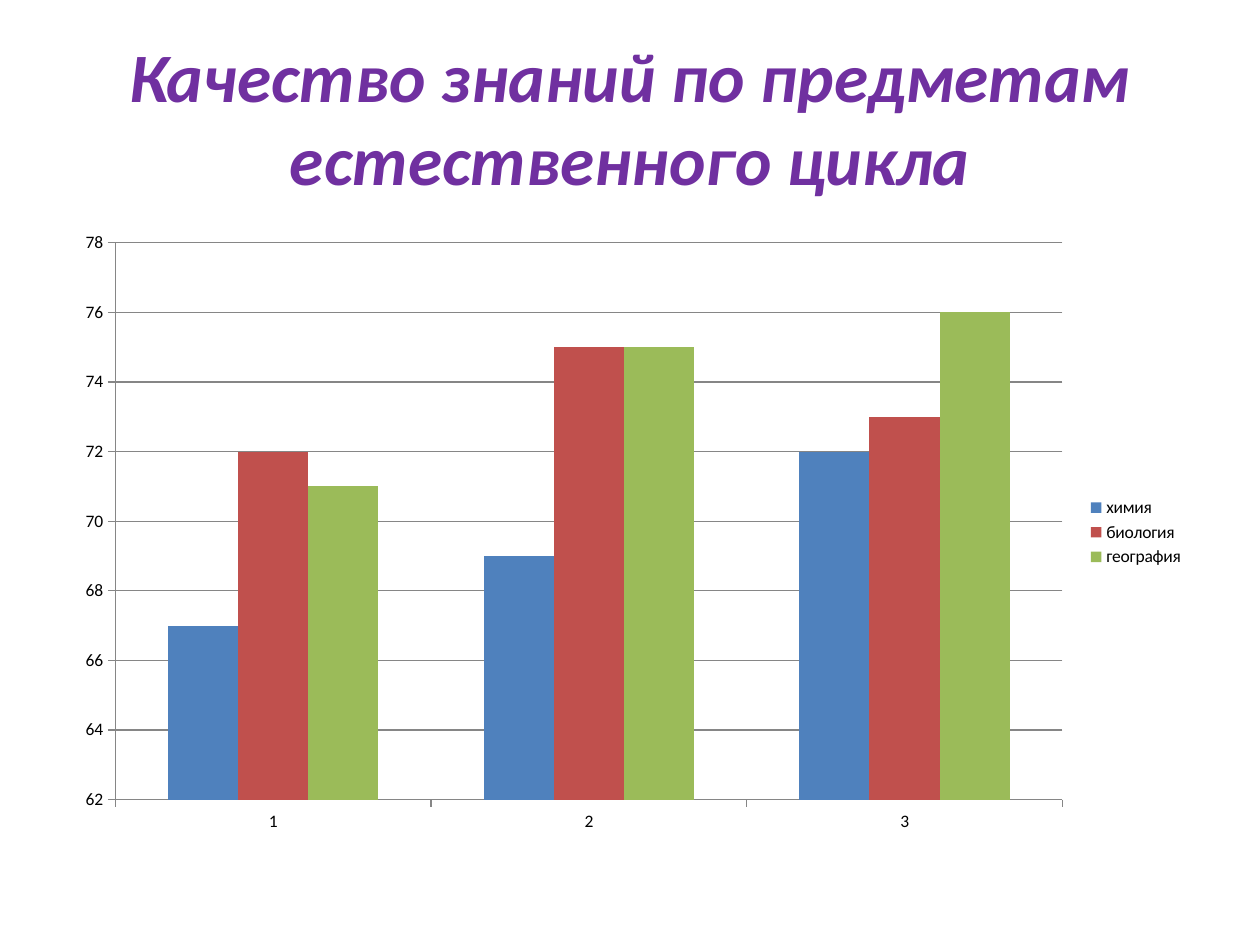
from dataclasses import dataclass

from pptx import Presentation
from pptx import util as u
from pptx.chart.data import CategoryChartData
from pptx.dml.color import RGBColor
from pptx.enum import chart as charts, text

FONT = "Calibri"
GRID_COLOR = "868686"


@dataclass
class Subject:
    name: str
    scores: tuple[float, ...]
    color: str


CATEGORIES = ("1", "2", "3")
SUBJECTS = (
    Subject("химия", (67, 69, 72), "4F81BD"),
    Subject("биология", (72, 75, 73), "C0504D"),
    Subject("география", (71, 75, 76), "9BBB59"),
)


def rgb(value: str) -> RGBColor:
    return RGBColor.from_string(value)


def place(shape, left: float, top: float, width: float, height: float) -> None:
    shape.left, shape.top = u.Inches(left), u.Inches(top)
    shape.width, shape.height = u.Inches(width), u.Inches(height)


def style_line(line) -> None:
    line.color.rgb = rgb(GRID_COLOR)
    line.width = u.Pt(0.75)


def add_title(slide, title: str) -> None:
    shape = slide.shapes.title
    place(shape, 0.5, 0.3, 9, 1.25)
    frame = shape.text_frame
    frame.text = title
    frame.word_wrap = True
    frame.auto_size = text.MSO_AUTO_SIZE.NONE
    frame.vertical_anchor = text.MSO_ANCHOR.MIDDLE
    paragraph = frame.paragraphs[0]
    paragraph.alignment = text.PP_ALIGN.CENTER
    font = paragraph.runs[0].font
    font.name, font.size = FONT, u.Pt(39.6)
    font.bold = font.italic = True
    font.color.rgb = rgb("7030A0")


def add_score_chart(slide, subjects: tuple[Subject, ...]) -> None:
    data = CategoryChartData()
    data.categories = CATEGORIES
    for subject in subjects:
        data.add_series(subject.name, subject.scores)
    chart = slide.shapes.add_chart(
        charts.XL_CHART_TYPE.COLUMN_CLUSTERED,
        u.Inches(0.5), u.Inches(1.75), u.Inches(9), u.Inches(4.95), data,
    ).chart

    chart.has_title = False
    chart.font.name, chart.font.size = FONT, u.Pt(10)
    chart.font.color.rgb = rgb("000000")
    chart.has_legend = True
    chart.legend.position = charts.XL_LEGEND_POSITION.RIGHT
    chart.legend.include_in_layout = False

    plot = chart.plots[0]
    plot.gap_width, plot.overlap = 150, 0
    plot.vary_by_categories = False
    for series, subject in zip(plot.series, subjects):
        series.format.fill.solid()
        series.format.fill.fore_color.rgb = rgb(subject.color)

    for axis in (chart.category_axis, chart.value_axis):
        axis.major_tick_mark = charts.XL_TICK_MARK.OUTSIDE
        axis.minor_tick_mark = charts.XL_TICK_MARK.NONE
        style_line(axis.format.line)
    scale = chart.value_axis
    scale.minimum_scale, scale.maximum_scale, scale.major_unit = 62, 78, 2
    scale.has_major_gridlines = True
    style_line(scale.major_gridlines.format.line)


def main() -> None:
    presentation = Presentation()
    presentation.slide_width, presentation.slide_height = u.Inches(10), u.Inches(7.5)
    title_only = presentation.slide_layouts[5]
    slide = presentation.slides.add_slide(title_only)
    add_title(slide, "Качество знаний по предметам естественного цикла")
    add_score_chart(slide, SUBJECTS)
    presentation.save("out.pptx")


if __name__ == "__main__":
    main()
